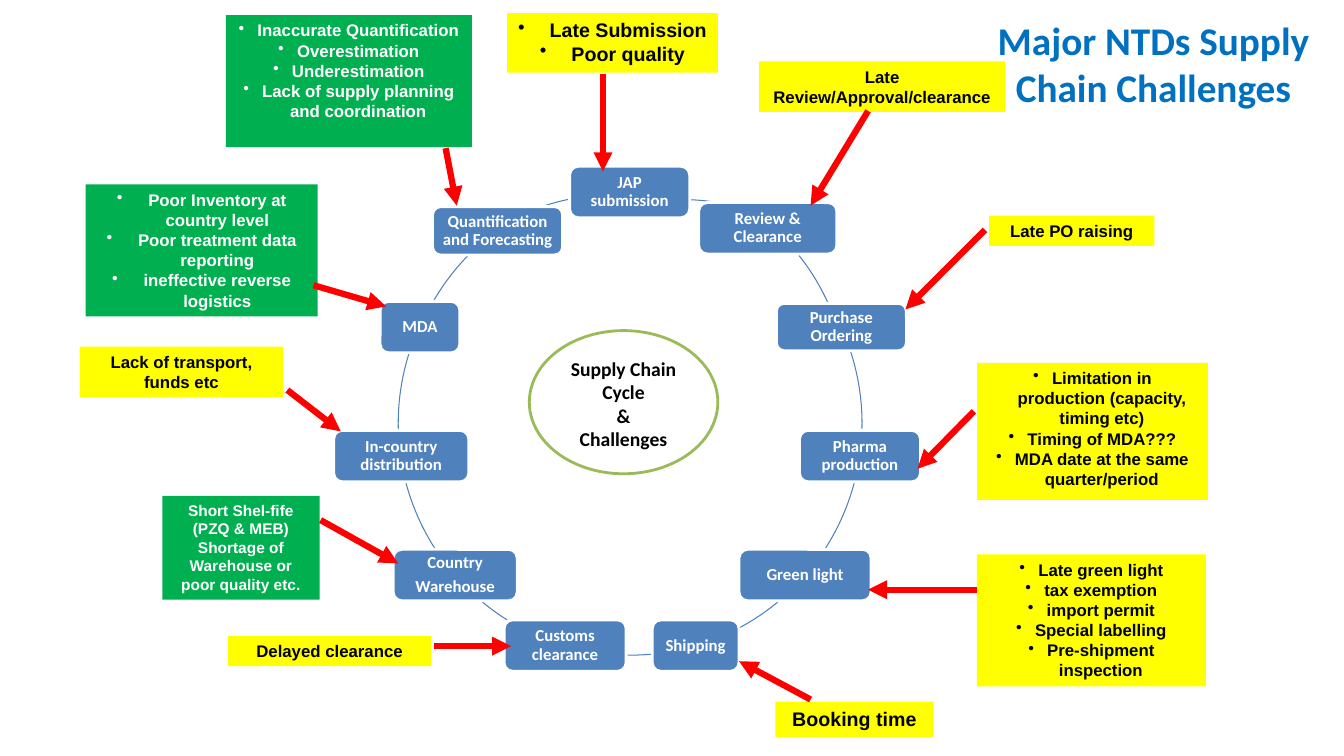
import lxml.etree
import pptx
import pptx.dml.color
import pptx.enum.shapes
import pptx.enum.text
import pptx.oxml.ns
import pptx.util

KIND = pptx.enum.shapes.MSO_SHAPE
TOP = pptx.enum.text.MSO_ANCHOR.TOP
MID = pptx.enum.text.MSO_ANCHOR.MIDDLE

THEME = {
    "blue": "4F81BD", "white": "FFFFFF", "black": "000000", "red": "FF0000",
    "sun": "FFFF00", "green": "00B050", "olive": "9BBB59", "title": "0070C0",
    "head": "Calibri", "body": "Arial",
    "big": 28, "mid": 14, "base": 12, "small": 11,
}

# Grid: 133.3 columns by 75 rows
COLS, ROWS = 133.3, 75
WIDE, HIGH = pptx.util.Inches(13.33), pptx.util.Inches(7.5)

# Stages of the cycle: column, row, width, height, lines
STAGES = [
    (56.5, 16.5, 11.9, 5.1, ["JAP submission"]),
    (69.3, 20.1, 13.7, 5.1, ["Review & Clearance"]),
    (77, 30.1, 12.9, 4.7, ["Purchase Ordering"]),
    (79.3, 42.7, 12, 5.1, ["Pharma production"]),
    (73.3, 54.5, 13.1, 5.1, ["Green light"]),
    (64.7, 61.5, 8.6, 5.1, ["Shipping"]),
    (50, 61.5, 12.1, 5.1, ["Customs clearance"]),
    (39, 54.5, 12.3, 5.1, ["Country", "Warehouse"]),
    (33.1, 42.7, 13.4, 5.1, ["In-country distribution"]),
    (37.7, 29.9, 7.9, 5.1, ["MDA"]),
    (42.9, 20.5, 12.9, 4.8, ["Quantification and Forecasting"]),
]

# Ring pieces between stages: circle corner, start and end in degrees
RING = 46
HOME = (39.5, 19)
ARCS = [
    ((44.5, 19.8), 272.5, 280), ((38.2, 16.6), 321.7, 335.7),
    (HOME, 342, 1.5), (HOME, 14.9, 32.7), (HOME, 50.1, 62),
    (HOME, 84.5, 91), (HOME, 122, 129.9), (HOME, 147.3, 165.1),
    (HOME, 178.5, 197.5), ((39.9, 18.4), 210.2, 224.1),
    ((38.1, 19.3), 251.5, 258.4),
]

# Challenges: box, fill, size, bullet indent in points, lines
NOTES = [
    ((50.3, 1.3, 20.9, 5.9), "sun", "mid", 22.5,
     ["Late Submission", "Poor quality"]),
    ((75.3, 6.1, 24.4, 5), "sun", "base", 0,
     ["Late Review/Approval/clearance"]),
    ((98.1, 21.4, 16.4, 3), "sun", "base", 0, ["Late PO raising"]),
    ((96.9, 36, 22.9, 13.6), "sun", "base", 13.5,
     ["Limitation in production (capacity, timing etc)",
      "Timing of MDA???", "MDA date at the same quarter/period"]),
    ((96.9, 55, 22.7, 13.1), "sun", "base", 13.5,
     ["Late green light", "tax exemption", "import permit",
      "Special labelling", "Pre-shipment inspection"]),
    ((76.9, 69.6, 15.7, 3.5), "sun", "mid", 0, ["Booking time"]),
    ((22.6, 63.1, 20.2, 3), "sun", "base", 0, ["Delayed clearance"]),
    ((16.1, 49.2, 15.6, 10.3), "green", "small", 0,
     ["Short Shel-fife (PZQ & MEB)",
      "Shortage of Warehouse or poor quality etc."]),
    ((7.9, 34.4, 20.2, 5), "sun", "base", 0,
     ["Lack of transport, funds etc"]),
    ((8.5, 18.3, 23, 13.1), "green", "base", 22.5,
     ["Poor Inventory at country level", "Poor treatment data reporting",
      "ineffective reverse logistics"]),
    ((22.4, 1.5, 24.4, 13.1), "green", "base", 13.5,
     ["Inaccurate Quantification", "Overestimation", "Underestimation",
      "Lack of supply planning and coordination"]),
]

# Arrows from challenge to stage: start column, row, end column, row
ARROWS = [
    (59.8, 7.3, 59.8, 17), (86.1, 11, 80.4, 20.4),
    (97.7, 22.8, 89.8, 30.7), (96.6, 40.8, 91, 46.5),
    (96.9, 58.5, 86.1, 58.5), (80.4, 69.4, 73.3, 65.6),
    (43, 64.1, 50.7, 64.1), (31.8, 51.6, 39.5, 55.9),
    (28.5, 38.7, 33.8, 42.8), (31.1, 28.3, 38.3, 30.4),
    (44.2, 14.7, 45.3, 20.4),
]


def place(*cells):
    """Turn column, row pairs into lengths."""
    units = (WIDE / COLS, HIGH / ROWS)
    return [round(cell * units[i % 2]) for i, cell in enumerate(cells)]


def tint(name):
    return pptx.dml.color.RGBColor.from_string(THEME[name])


def apply(thing, form):
    for key, value in form.items():
        setattr(thing, key, value)


def mark(para, indent):
    props = para._p.get_or_add_pPr()
    step = pptx.util.Pt(indent)
    props.set("marL", str(step))
    props.set("indent", str(-step))
    tag = pptx.oxml.ns.qn("a:buChar")
    lxml.etree.SubElement(props, tag).set("char", "•")


def write(shape, lines, font, size, color, indent=0, pad=(7.2, 3.6),
          anchor=TOP, form=None):
    side, edge = map(pptx.util.Pt, pad)
    frame = shape.text_frame
    apply(frame, {"word_wrap": True, "vertical_anchor": anchor,
                  "margin_left": side, "margin_right": side,
                  "margin_top": edge, "margin_bottom": edge})
    for i, line in enumerate(lines):
        para = frame.add_paragraph() if i else frame.paragraphs[0]
        if indent:
            mark(para, indent)
        apply(para, {"alignment": pptx.enum.text.PP_ALIGN.CENTER,
                     **(form or {})})
        run = para.add_run()
        run.text = line
        apply(run.font, {"name": THEME[font], "bold": True,
                         "size": pptx.util.Pt(THEME[size])})
        run.font.color.rgb = tint(color)


def draw(slide, kind, box, fill=None, line=None, width=2):
    shape = slide.shapes.add_shape(kind, *place(*box))
    shape.shadow.inherit = False
    if fill:
        shape.fill.solid()
        shape.fill.fore_color.rgb = tint(fill)
    else:
        shape.fill.background()
    if line:
        shape.line.color.rgb = tint(line)
        shape.line.width = pptx.util.Pt(width)
    else:
        shape.line.fill.background()
    return shape


def stage(slide, col, row, wide, high, lines):
    shape = draw(slide, KIND.ROUNDED_RECTANGLE, (col, row, wide, high),
                 "blue", "white")
    write(shape, lines, "head", "base", "white", pad=(5.4, 5.4), anchor=MID,
          form={"line_spacing": 0.9, "space_after": pptx.util.Pt(4.2)})


def arc(slide, corner, start, end):
    shape = draw(slide, KIND.ARC, (*corner, RING, RING), None, "blue", 0.75)
    for i, angle in enumerate((start, end)):
        shape.adjustments[i] = angle * 0.6


def note(slide, box, fill, size, indent, lines):
    shape = draw(slide, KIND.RECTANGLE, box, fill)
    color = "white" if fill == "green" else "black"
    write(shape, lines, "body", size, color, indent)


def arrow(slide, *ends):
    kind = pptx.enum.shapes.MSO_CONNECTOR.STRAIGHT
    link = slide.shapes.add_connector(kind, *place(*ends))
    link.line.color.rgb = tint("red")
    link.line.width = pptx.util.Pt(4.5)
    name = pptx.oxml.ns.qn
    tip = lxml.etree.SubElement(link.line._get_or_add_ln(), name("a:tailEnd"))
    tip.set("type", "triangle")
    lxml.etree.SubElement(link._element.spPr, name("a:effectLst"))


def main():
    deck = pptx.Presentation()
    apply(deck, {"slide_width": WIDE, "slide_height": HIGH})
    slide = deck.slides.add_slide(deck.slide_layouts[6])

    # Cycle
    for part in ARCS:
        arc(slide, *part)
    for part in STAGES:
        stage(slide, *part)

    # Hub
    hub = draw(slide, KIND.OVAL, (52.5, 32.8, 18.7, 14.2), "white", "olive")
    write(hub, ["Supply Chain Cycle", "&", "Challenges"],
          "head", "mid", "black")

    # Title
    title = slide.shapes.add_textbox(*place(97.9, 1.1, 33, 15.1))
    write(title, ["Major NTDs Supply Chain Challenges"],
          "head", "big", "title")

    # Challenges and their arrows
    for part in NOTES:
        note(slide, *part)
    for part in ARROWS:
        arrow(slide, *part)

    deck.save("out.pptx")


if __name__ == "__main__":
    main()
